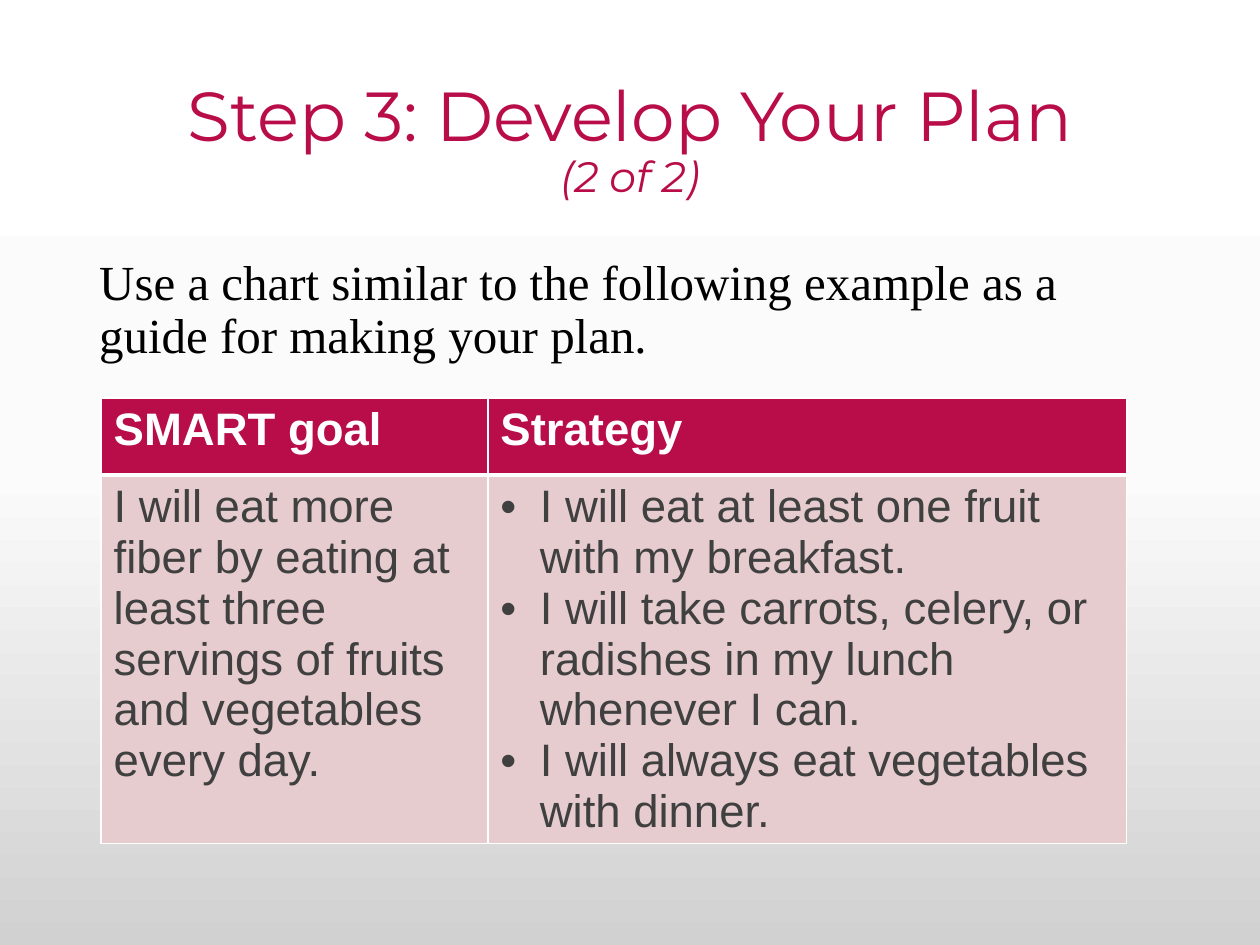
"""Build the slide on developing a plan, with its SMART goal and strategy table."""
from copy import deepcopy
from dataclasses import dataclass
from typing import Any

from lxml.etree import SubElement
from pptx import Presentation
from pptx.dml.color import RGBColor
from pptx.enum.text import MSO_ANCHOR, MSO_AUTO_SIZE, PP_ALIGN
from pptx.oxml.ns import qn
from pptx.util import Pt

CRIMSON = RGBColor(0xB8, 0x0D, 0x48)
ROSE = RGBColor(0xE6, 0xCC, 0xCF)
CHARCOAL = RGBColor(0x3F, 0x40, 0x3F)
BLACK = RGBColor(0, 0, 0)
WHITE = RGBColor(0xFF, 0xFF, 0xFF)
BACKDROP = (
    (0, WHITE),
    (0.5, RGBColor(0xFB, 0xFB, 0xFB)),
    (1, RGBColor(0xD1, 0xD1, 0xD1)),
)

TITLE_FONT = {"name": "Montserrat", "size": Pt(39.6), "italic": False}
PART_FONT = {"name": "Montserrat", "size": Pt(24.3), "italic": True}
INTRO_FONT = {"name": "Times New Roman", "size": Pt(28)}
TABLE_FONT = {"name": "Arial", "size": Pt(26)}
BULLET_INDENT = Pt(22.5)


@dataclass(frozen=True)
class RowStyle:
    """Look of one table row."""

    height: float
    fill: RGBColor
    ink: RGBColor
    bold: bool
    borders: dict[str, float]


@dataclass(frozen=True)
class PlanCell:
    """Wording of one table cell."""

    lines: tuple[str, ...]
    bulleted: bool = False


HEADER = RowStyle(44, CRIMSON, WHITE, True, {"L": 1, "R": 1, "T": 1, "B": 3})
ENTRY = RowStyle(141, ROSE, CHARCOAL, False, {"L": 1, "R": 1, "T": 3, "B": 1})
PLAN = (
    (HEADER, (PlanCell(("SMART goal",)), PlanCell(("Strategy",)))),
    (ENTRY, (
        PlanCell(("I will eat more fiber by eating at least three servings "
                  "of fruits and vegetables every day.",)),
        PlanCell((
            "I will eat at least one fruit with my breakfast.",
            "I will take carrots, celery, or radishes in my lunch whenever I can.",
            "I will always eat vegetables with dinner.",
        ), bulleted=True),
    )),
)


def apply_format(target: Any, values: dict[str, Any]) -> None:
    """Set each named attribute on the target."""
    for attribute, value in values.items():
        setattr(target, attribute, value)


def add_words(paragraph: Any, words: str, font: dict[str, Any], ink: RGBColor) -> None:
    """Append a formatted run to the paragraph."""
    run = paragraph.add_run()
    run.text = words
    apply_format(run.font, font)
    run.font.color.rgb = ink


def place(placeholder: Any, left: float, top: float, width: float, height: float,
          anchor: MSO_ANCHOR) -> Any:
    """Position a placeholder and return its first paragraph."""
    apply_format(placeholder, {"left": Pt(left), "top": Pt(top),
                               "width": Pt(width), "height": Pt(height)})
    apply_format(placeholder.text_frame, {
        "word_wrap": True, "auto_size": MSO_AUTO_SIZE.NONE, "vertical_anchor": anchor})
    return placeholder.text_frame.paragraphs[0]


def set_indent(paragraph: Any, indent: int, bullet: str = "") -> None:
    """Give the paragraph a hanging bullet, or none at all."""
    properties = paragraph._p.get_or_add_pPr()
    properties.set("marL", str(indent))
    properties.set("indent", str(-indent))
    if bullet:
        SubElement(properties, qn("a:buFont"), typeface="Arial")
        SubElement(properties, qn("a:buChar"), char=bullet)
    else:
        SubElement(properties, qn("a:buNone"))


def paint_backdrop(slide: Any) -> None:
    """Fill the slide background with the vertical gradient."""
    fill = slide.background.fill
    fill.gradient()
    fill.gradient_angle = 270
    stop_list = slide.element.find(".//" + qn("a:gsLst"))
    stop_list.append(deepcopy(stop_list[0]))
    for stop, (position, shade) in zip(fill.gradient_stops, BACKDROP):
        stop.position = position
        stop.color.rgb = shade


def draw_borders(cell: Any, borders: dict[str, float]) -> None:
    """Draw white lines of the given widths around a cell."""
    properties = cell._tc.get_or_add_tcPr()
    for side, width in borders.items():
        line = SubElement(properties, qn(f"a:ln{side}"), w=str(Pt(width)))
        solid = SubElement(line, qn("a:solidFill"))
        SubElement(solid, qn("a:srgbClr"), val=str(WHITE))


def fill_cell(cell: Any, content: PlanCell, style: RowStyle) -> None:
    """Write and style one table cell."""
    draw_borders(cell, style.borders)
    cell.fill.solid()
    cell.fill.fore_color.rgb = style.fill
    frame = cell.text_frame
    for index, words in enumerate(content.lines):
        paragraph = frame.add_paragraph() if index else frame.paragraphs[0]
        if content.bulleted:
            set_indent(paragraph, BULLET_INDENT, "•")
        add_words(paragraph, words, TABLE_FONT | {"bold": style.bold}, style.ink)


def add_plan_table(slide: Any) -> None:
    """Add the table of goal and strategies."""
    graphic = slide.shapes.add_table(2, 2, Pt(57.8), Pt(227.5), Pt(586), Pt(270))
    table = graphic.table
    for column, width in zip(table.columns, (221, 365)):
        column.width = Pt(width)
    for row, (style, contents) in zip(table.rows, PLAN):
        row.height = Pt(style.height)
        for cell, content in zip(row.cells, contents):
            fill_cell(cell, content, style)


def main() -> None:
    """Create and save the presentation."""
    presentation = Presentation()
    apply_format(presentation, {"slide_width": Pt(720), "slide_height": Pt(540)})
    slide = presentation.slides.add_slide(presentation.slide_layouts[1])
    paint_backdrop(slide)

    heading = place(slide.shapes.title, 49.5, 28.75, 621, 104.4, MSO_ANCHOR.MIDDLE)
    apply_format(heading, {"alignment": PP_ALIGN.CENTER, "line_spacing": 0.9})
    add_words(heading, "Step 3: Develop Your Plan", TITLE_FONT, CRIMSON)
    heading.add_line_break()
    add_words(heading, "(2 of 2)", PART_FONT, CRIMSON)

    intro = place(slide.placeholders[1], 49.5, 143.75, 621, 342.6, MSO_ANCHOR.TOP)
    apply_format(intro, {"line_spacing": 0.9, "space_before": Pt(10)})
    set_indent(intro, 0)
    add_words(intro, "Use a chart similar to the following example as a guide "
                     "for making your plan.", INTRO_FONT, BLACK)

    add_plan_table(slide)
    presentation.save("out.pptx")


if __name__ == "__main__":
    main()
